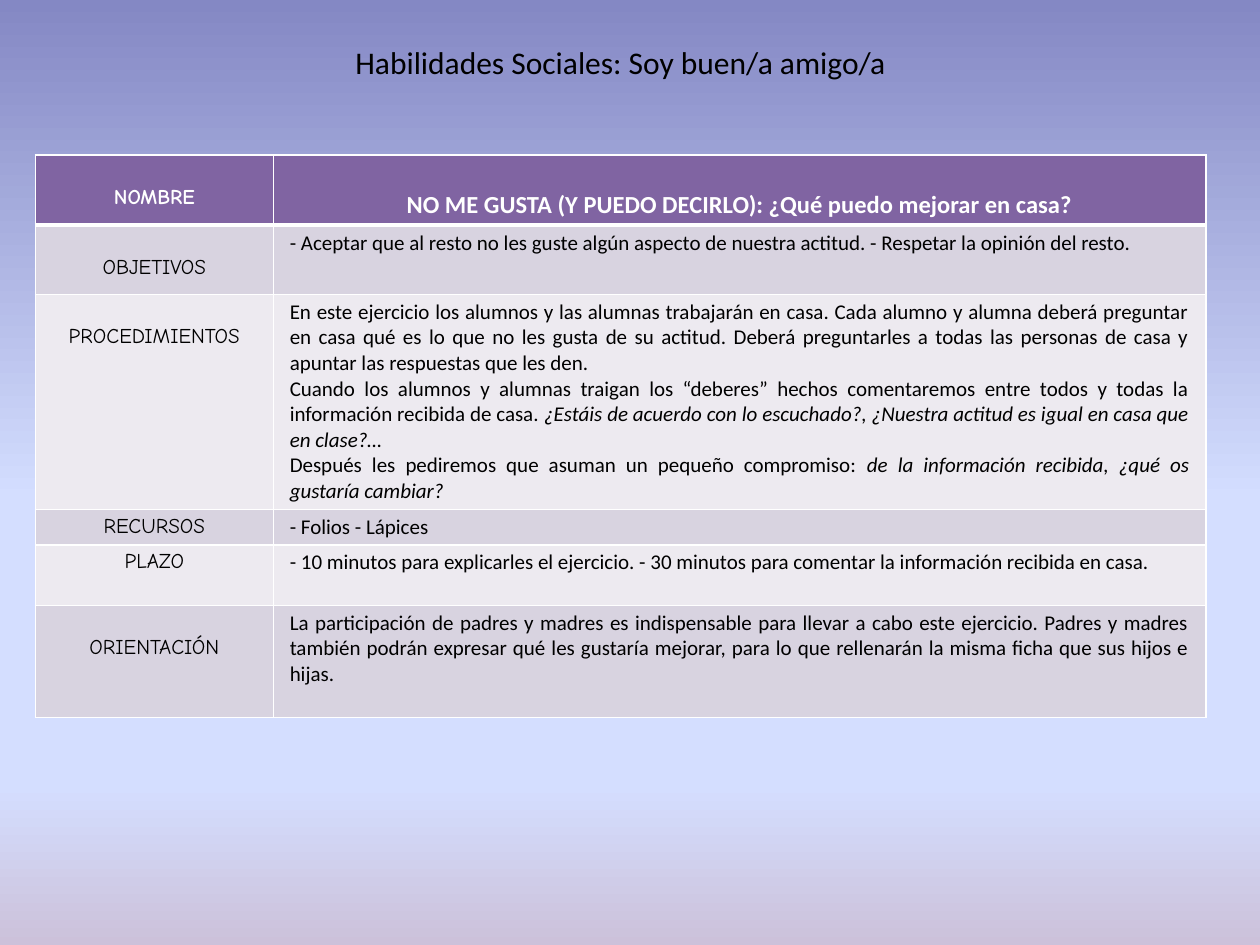
from dataclasses import dataclass

import pptx
import pptx.dml.color
import pptx.enum.text
import pptx.oxml.ns
import pptx.util
from lxml import etree

Inches = pptx.util.Inches
RGBColor = pptx.dml.color.RGBColor
Align = pptx.enum.text.PP_ALIGN
qn = pptx.oxml.ns.qn

WHITE = RGBColor(0xFF, 0xFF, 0xFF)
BLACK = RGBColor(0x00, 0x00, 0x00)
PURPLE = RGBColor(0x80, 0x64, 0xA2)
LILAC = RGBColor(0xD8, 0xD3, 0xE0)
PALE = RGBColor(0xED, 0xEA, 0xF0)
BLUE = RGBColor(0x84, 0x88, 0xC4)
SKY = RGBColor(0xD4, 0xDE, 0xFF)
MAUVE = RGBColor(0xCC, 0xC1, 0xDA)
STOPS = [(0, BLUE), (53, SKY), (83, SKY), (100, MAUVE)]

HAND = "Comic Neue"
SANS = "Calibri"
WIDTHS = [1.89, 7.4]
PAD = 0.04
DROP = 0.24


@dataclass
class Part:
    text: str
    slant: bool = False


@dataclass
class Row:
    label: str
    height: float
    paras: list[list[Part]]
    top: float = PAD


ROWS = [
    Row("NOMBRE", 0.55, [[Part(
        "NO ME GUSTA (Y PUEDO DECIRLO): ¿Qué puedo mejorar en casa?")]], DROP),
    Row("OBJETIVOS", 0.55, [[Part(
        "- Aceptar que al resto no les guste algún aspecto de nuestra actitud. "
        "- Respetar la opinión del resto.")]], DROP),
    Row("PROCEDIMIENTOS", 1.7, [
        [Part("En este ejercicio los alumnos y las alumnas trabajarán en casa. "
              "Cada alumno y alumna deberá preguntar en casa qué es lo que no les "
              "gusta de su actitud. Deberá preguntarles a todas las personas de "
              "casa y apuntar las respuestas que les den.")],
        [Part("Cuando los alumnos y alumnas traigan los “deberes” hechos "
              "comentaremos entre todos y todas la información recibida de casa. "),
         Part("¿Estáis de acuerdo con lo escuchado?, ¿Nuestra actitud es igual "
              "en casa que en clase?…", True)],
        [Part("Después les pediremos que asuman un pequeño compromiso: "),
         Part("de la información recibida, ¿qué os gustaría cambiar?", True)],
    ], DROP),
    Row("RECURSOS", 0.28, [[Part("- Folios - Lápices")]]),
    Row("PLAZO", 0.48, [[Part(
        "- 10 minutos para explicarles el ejercicio. "
        "- 30 minutos para comentar la información recibida en casa.")]]),
    Row("ORIENTACIÓN", 0.89, [[Part(
        "La participación de padres y madres es indispensable para llevar a cabo "
        "este ejercicio. Padres y madres también podrán expresar qué les gustaría "
        "mejorar, para lo que rellenarán la misma ficha que sus hijos e hijas.")]],
        DROP),
]


def add_solid(node, color: RGBColor) -> None:
    etree.SubElement(node, qn("a:srgbClr"), val=str(color))


def paint_back(slide) -> None:
    fill = slide.background.fill
    fill.gradient()
    fill.gradient_angle = 270
    stops = next(slide.element.iter(qn("a:gsLst")))
    for old in list(stops):
        stops.remove(old)
    for place, color in STOPS:
        add_solid(etree.SubElement(stops, qn("a:gs"), pos=str(place * 1000)), color)


def draw_edges(cell, base: float) -> None:
    props = cell._tc.get_or_add_tcPr()
    for side, width in (("L", 1), ("R", 1), ("T", 1), ("B", base)):
        line = etree.SubElement(props, qn(f"a:ln{side}"),
                                w=str(pptx.util.Pt(width)))
        add_solid(etree.SubElement(line, qn("a:solidFill")), WHITE)


def style_font(font, face: str, size: float, color: RGBColor,
               bold: bool = False, slant: bool = False) -> None:
    font.name = face
    font.size = pptx.util.Pt(size)
    font.color.rgb = color
    font.bold = bold
    font.italic = slant


def fill_cell(cell, paras: list[list[Part]], face: str, size: float,
              align, top: float, head: bool, shade: RGBColor) -> None:
    draw_edges(cell, 3 if head else 1)
    cell.fill.solid()
    cell.fill.fore_color.rgb = shade
    cell.margin_left = cell.margin_right = Inches(0.13)
    cell.margin_top = Inches(top)
    cell.margin_bottom = Inches(PAD)
    frame = cell.text_frame
    frame.text = "\n".join("" for _ in paras)
    for para, parts in zip(frame.paragraphs, paras):
        para.alignment = align
        for part in parts:
            run = para.add_run()
            run.text = part.text
            style_font(run.font, face, size, WHITE if head else BLACK,
                       head, part.slant)


def add_grid(slide) -> None:
    high = sum(row.height for row in ROWS)
    table = slide.shapes.add_table(
        len(ROWS), len(WIDTHS), Inches(0.28), Inches(1.23),
        Inches(sum(WIDTHS)), Inches(high)).table
    table.first_row = table.horz_banding = False
    for col, width in zip(table.columns, WIDTHS):
        col.width = Inches(width)
    for i, row in enumerate(ROWS):
        table.rows[i].height = Inches(row.height)
        head = i == 0
        shade = PURPLE if head else LILAC if i % 2 else PALE
        fill_cell(table.cell(i, 0), [[Part(row.label)]], HAND, 12,
                  Align.CENTER, row.top, head, shade)
        fill_cell(table.cell(i, 1), row.paras, SANS, 14 if head else 12,
                  Align.CENTER if head else Align.JUSTIFY,
                  0.28 if head else PAD, head, shade)


def set_title(slide) -> None:
    title = slide.shapes.title
    title.left, title.top = Inches(2.72), Inches(0.29)
    title.width, title.height = Inches(4.8), Inches(0.4)
    frame = title.text_frame
    frame.text = "Habilidades Sociales: Soy buen/a amigo/a"
    frame.word_wrap = True
    frame.auto_size = pptx.enum.text.MSO_AUTO_SIZE.NONE
    frame.vertical_anchor = pptx.enum.text.MSO_ANCHOR.TOP
    para = frame.paragraphs[0]
    para.alignment = Align.LEFT
    style_font(para.runs[0].font, SANS, 18, BLACK)


def main() -> None:
    deck = pptx.Presentation()
    deck.slide_width, deck.slide_height = Inches(10), Inches(7.5)
    slide = deck.slides.add_slide(deck.slide_layouts[5])
    paint_back(slide)
    add_grid(slide)
    set_title(slide)
    deck.save("out.pptx")


if __name__ == "__main__":
    main()
